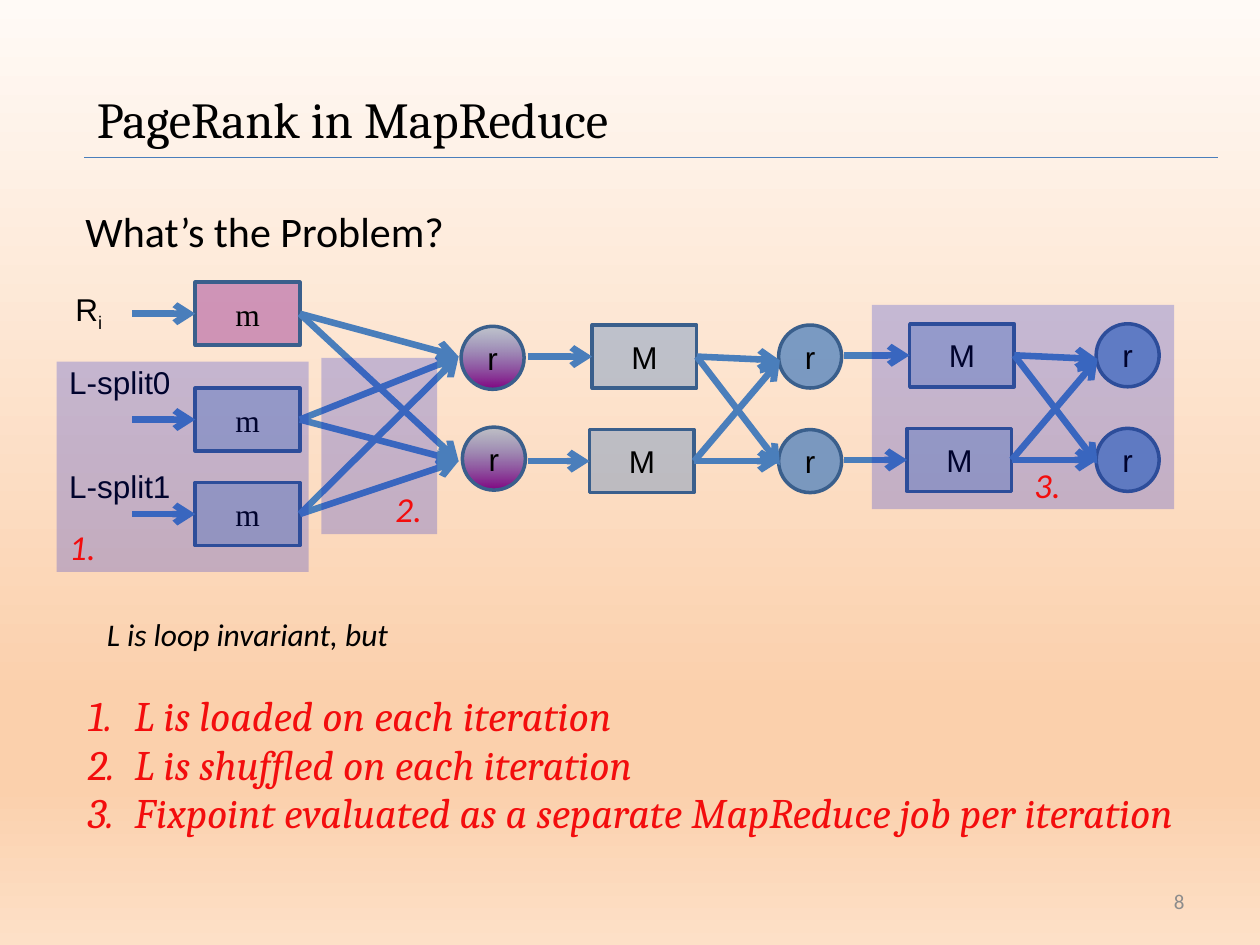
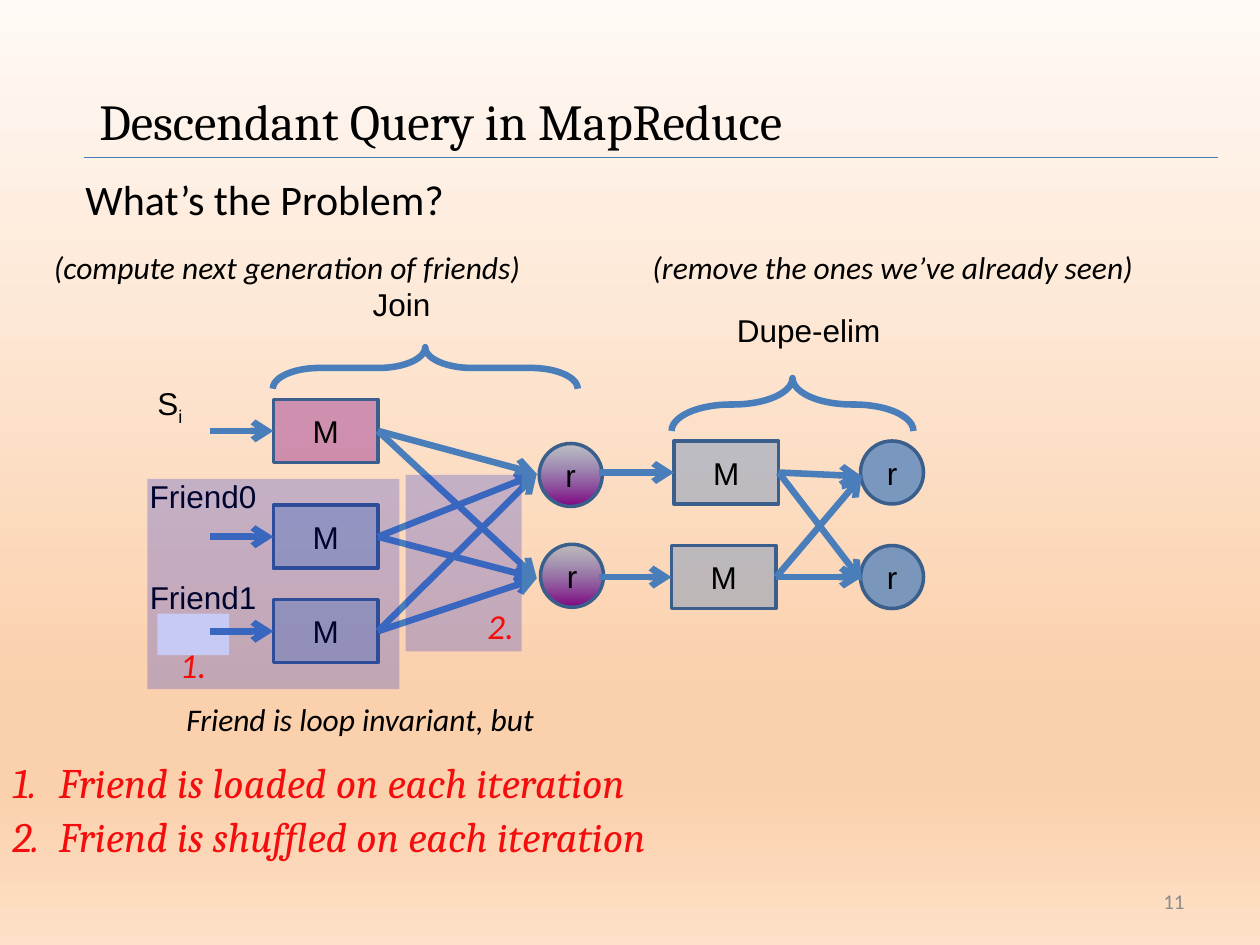
"""Two slides on what MapReduce loses when a query has to loop."""
from copy import deepcopy

from lxml import etree
from pptx import Presentation
from pptx import util as u
from pptx.dml.color import RGBColor
from pptx.enum import shapes, text
from pptx.oxml.ns import qn

COLORS = {
    "ink": "000000", "red": "F30D0D", "page": "8C8C8C", "white": "FFFFFF",
    "arrow": "4A7EBB", "edge": "3A5F8C", "blue": "4F81BD",
    "purple": "800080", "cover": "0011CF",
}
BACKGROUND = [(0, "FFFAF6"), (0.74, "FBD0AC"), (0.83, "FBD0AC"), (1, "FDE0C7")]
FILLS = {
    "state": [("purple", 36)],
    "map": [("blue", 36)],
    "reduce": [("blue", 75)],
    "join": [("blue", 35), ("purple", 100)],
    "cover": [("cover", 22)],
    "blank": [("white", 100)],
}
PROCESS = shapes.MSO_SHAPE.FLOWCHART_PROCESS
CIRCLE = shapes.MSO_SHAPE.FLOWCHART_CONNECTOR
RECT = shapes.MSO_SHAPE.RECTANGLE
ALIGN = text.PP_ALIGN
MIDDLE = text.MSO_ANCHOR.MIDDLE

SLIDES = [
    {
        "number": "8", "title": "PageRank in MapReduce", "title_at": (0.67, 0.64),
        "question_y": 1.58, "join": (1.55, 2.24), "mapper": ("m", "Times New Roman"),
        "jobs": [(4.7, 2.58, 4.19), (7.22, 2.57, 6.7)],
        "labels": [("R_i", 0.5, 2.25, 0.5), ("L-split0", 0.45, 2.83, 1.17),
                   ("L-split1", 0.45, 3.66, 1.17)],
        "notes": [("L is loop invariant, but", 0.75, 4.83, 3.26)],
        "blanks": [], "braces": [],
        "covers": [(0.45, 2.87, 2, 1.67), (2.55, 2.84, 0.92, 1.4), (6.92, 2.42, 2.4, 1.62)],
        "marks": [(0.45, 4.12), (3.04, 3.82), (8.11, 3.63)],
        "body": (0.6, 5.5, 9.4, 1.33), "spacing": 0.8,
        "bullets": ["L is loaded on each iteration", "L is shuffled on each iteration",
                    "Fixpoint evaluated as a separate MapReduce job per iteration"],
    },
    {
        "number": "11", "title": "Descendant Query in MapReduce", "title_at": (0.69, 0.66),
        "question_y": 1.33, "join": (2.17, 3.17), "mapper": ("M", "Arial"),
        "jobs": [(5.35, 3.5, 4.75)],
        "labels": [("S_i", 1.15, 3, 0.5), ("Friend0", 1.09, 3.74, 1.27),
                   ("Friend1", 1.09, 4.54, 1.18), ("Join", 2.86, 2.21, 1.07),
                   ("Dupe-elim", 5.75, 2.42, 1.83)],
        "notes": [("Friend is loop invariant, but", 1.38, 5.51, 3.98),
                  ("(compute next generation of friends)", 0.33, 1.92, 4.92),
                  ("(remove the ones we’ve already seen)", 5.08, 1.92, 4.92)],
        "blanks": [(1.25, 4.87, 0.57, 0.33)],
        "braces": [(3.21, 1.71, 0.33, 2.42), (6.08, 2.25, 0.42, 1.92)],
        "covers": [(1.17, 3.8, 2, 1.67), (3.22, 3.77, 0.92, 1.4)],
        "marks": [(1.33, 5.06), (3.77, 4.75)],
        "body": (0, 6, 5.84, 0.98), "spacing": 0.9,
        "bullets": ["Friend is loaded on each iteration", "Friend is shuffled on each iteration"],
    },
]


def write(s, at, lines, size, font, color="ink", italic=False, align=ALIGN.LEFT):
    """Add a text box; an underscore in a line starts a subscript."""
    tf = s.shapes.add_textbox(*map(u.Inches, at)).text_frame
    tf.word_wrap = True
    for i, line in enumerate(lines):
        p = tf.add_paragraph() if i else tf.paragraphs[0]
        p.text, _, sub = line.partition("_")
        p.alignment = align
        if sub:
            r = p.add_run()
            r.text = sub
            r.font._element.set("baseline", "-25000")
        for r in p.runs:
            r.font.size, r.font.name, r.font.italic = u.Pt(size), font, italic
            r.font.color.rgb = RGBColor.from_string(COLORS[color])
    return tf


def block(s, kind, at, fill, label="", font="Arial"):
    """Add a filled shape; one that carries a label also gets an outline."""
    sp = s.shapes.add_shape(kind, *map(u.Inches, at))
    sp.shadow.inherit = False
    stops = FILLS[fill]
    if len(stops) > 1:
        sp.fill.gradient()
        sp.fill.gradient_angle = 270
        targets = [stop.color for stop in sp.fill.gradient_stops]
    else:
        sp.fill.solid()
        targets = [sp.fill.fore_color]
    for target, (color, _) in zip(targets, stops):
        target.rgb = RGBColor.from_string(COLORS[color])
    for clr, (_, alpha) in zip(sp.element.spPr.iter(qn("a:srgbClr")), stops):
        if alpha < 100:
            etree.SubElement(clr, qn("a:alpha"), val=str(alpha * 1000))
    if not label:
        sp.line.fill.background()
        return sp
    sp.line.color.rgb = RGBColor.from_string(COLORS["edge"])
    sp.line.width = u.Pt(2)
    tf = sp.text_frame
    tf.text = label
    tf.vertical_anchor = MIDDLE
    p = tf.paragraphs[0]
    p.alignment = ALIGN.CENTER
    r = p.runs[0]
    r.font.size, r.font.name = u.Pt(18), font
    r.font.color.rgb = RGBColor.from_string(COLORS["ink"])
    return sp


prs = Presentation()
prs.slide_width, prs.slide_height = u.Inches(10), u.Inches(7.5)

fill = prs.slide_master.background.fill
fill.gradient()
fill.gradient_angle = 270
stop_list = next(prs.slide_master.element.iter(qn("a:gsLst")))
for _ in BACKGROUND[2:]:
    stop_list.append(deepcopy(stop_list[0]))
for stop, (position, color) in zip(fill.gradient_stops, BACKGROUND):
    stop.position = position
    stop.color.rgb = RGBColor.from_string(color)

for d in SLIDES:
    s = prs.slides.add_slide(prs.slide_layouts[6])
    tf = write(s, (7.17, 6.95, 2.33, 0.4), [d["number"]], 12, "Calibri", "page", align=ALIGN.RIGHT)
    tf.vertical_anchor = MIDDLE
    tf = write(s, (*d["title_at"], 9.24, 0.59), [d["title"]], 28.8, "Cambria")
    tf.vertical_anchor = MIDDLE
    write(s, (0.58, d["question_y"], 3.32, 0.5), ["What’s the Problem?"], 24, "Calibri")

    tf = write(s, d["body"], d["bullets"], 24, "Cambria", "red", True)
    for p in tf.paragraphs:
        p.line_spacing, p.space_before = d["spacing"], u.Pt(4.8)
        pPr = p._p.get_or_add_pPr()
        pPr.set("marL", str(u.Inches(0.37)))
        pPr.set("indent", str(u.Inches(-0.37)))
        bullet_color = etree.SubElement(pPr, qn("a:buClr"))
        etree.SubElement(bullet_color, qn("a:srgbClr"), val=COLORS["red"])
        etree.SubElement(pPr, qn("a:buFont"), typeface="Cambria")
        etree.SubElement(pPr, qn("a:buAutoNum"), type="arabicPeriod")

    for label, x, y, w in d["labels"]:
        write(s, (x, y, w, 0.4), [label], 18, "Arial")
    for note, x, y, w in d["notes"]:
        write(s, (x, y, w, 0.4), [note], 18, "Calibri", italic=True)
    for at in d["blanks"]:
        block(s, RECT, at, "blank")

    lines = [((0.67, 1.25), (9.67, 1.25))]
    x, y = d["join"]
    for dy, kind in ((0, "state"), (0.84, "map"), (1.59, "map")):
        mapper = block(s, PROCESS, (x, y + dy, 0.83, 0.5), kind, *d["mapper"])
        lines.append(((x - 0.5, y + dy + 0.25), mapper))
        lines += [(mapper, (x + 2.09, y + end)) for end in (0.59, 1.42)]
    for dx, dy in ((2.11, 0.35), (2.12, 1.15)):
        block(s, CIRCLE, (x + dx, y + dy, 0.5, 0.5), "join", "r")

    for x, y, feed_x in d["jobs"]:
        for dx, dy, low_end in ((0, 0, 1.11), (-0.02, 0.83, 1.08)):
            mapper = block(s, PROCESS, (x + dx, y + dy, 0.83, 0.5), "map", "M")
            block(s, CIRCLE, (x + 1.48, y + dy, 0.5, 0.5), "reduce", "r")
            lines.append(((feed_x, y + dy + 0.25), mapper))
            lines += [(mapper, (x + 1.49, y + end)) for end in (0.28, low_end)]

    for i, (begin, end) in enumerate(lines):
        start_at = begin if isinstance(begin, tuple) else (0, 0)
        end_at = end if isinstance(end, tuple) else (0, 0)
        c = s.shapes.add_connector(shapes.MSO_CONNECTOR.STRAIGHT, *map(u.Inches, start_at + end_at))
        if begin is not start_at:
            c.begin_connect(begin, 3)
        if end is not end_at:
            c.end_connect(end, 1)
        c.line.color.rgb = RGBColor.from_string(COLORS["arrow"])
        c.line.width = u.Pt(3.75 if i else 0.75)
        spPr = c.element.spPr
        if i:
            etree.SubElement(spPr.find(qn("a:ln")), qn("a:tailEnd"), type="arrow")
        etree.SubElement(spPr, qn("a:effectLst"))

    for at in d["braces"]:
        sp = s.shapes.add_shape(shapes.MSO_SHAPE.RIGHT_BRACE, *map(u.Inches, at))
        sp.shadow.inherit = False
        sp.rotation = 270
        sp.adjustments[0], sp.adjustments[1] = 1.125, 0.5
        sp.fill.background()
        sp.line.color.rgb = RGBColor.from_string(COLORS["arrow"])
        sp.line.width = u.Pt(3.75)

    for at in d["covers"]:
        block(s, RECT, at, "cover")
    for i, (x, y) in enumerate(d["marks"], 1):
        write(s, (x, y, 0.5, 0.43), [f"{i}."], 20, "Calibri", "red", True)

prs.save("out.pptx")
